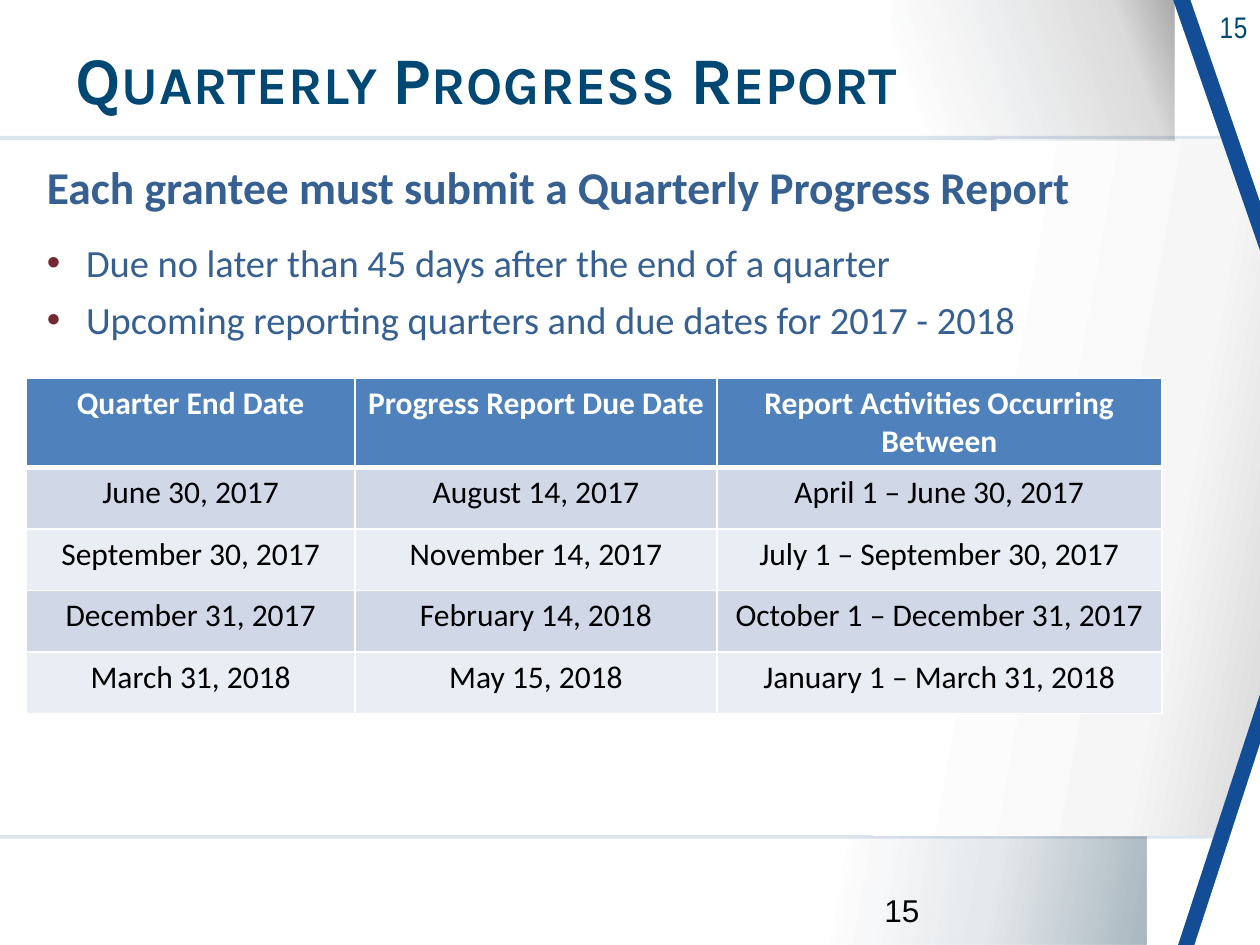
"""Build the quarterly progress report slide."""
from dataclasses import dataclass
from typing import Any, Dict, NamedTuple, Tuple

from lxml.etree import SubElement
from pptx import Presentation
from pptx.dml.color import RGBColor
from pptx.enum.shapes import MSO_SHAPE
from pptx.enum.text import MSO_ANCHOR, MSO_AUTO_SIZE, PP_ALIGN
from pptx.oxml.ns import qn
from pptx.util import Cm, Pt

WHITE = RGBColor(0xFF, 0xFF, 0xFF)
BLACK = RGBColor(0x00, 0x00, 0x00)
PALE = RGBColor(0xF6, 0xF6, 0xF6)
GREY = RGBColor(0xD9, 0xD9, 0xD9)
RULE = RGBColor(0x27, 0x5A, 0x99)
NAVY = RGBColor(0x00, 0x2C, 0x47)
BLUE = RGBColor(0x12, 0x4D, 0x95)
TITLE = RGBColor(0x00, 0x48, 0x74)
TEXT = RGBColor(0x37, 0x60, 0x92)
BULLET = RGBColor(0x75, 0x28, 0x32)
HEADER = RGBColor(0x4F, 0x81, 0xBD)
BANDS = (RGBColor(0xD0, 0xD8, 0xE8), RGBColor(0xE9, 0xED, 0xF4))


class Box(NamedTuple):
    left: float
    top: float
    width: float
    height: float


class Stop(NamedTuple):
    pos: int
    color: RGBColor
    alpha: int = 100


@dataclass
class Panel:
    box: Box
    stops: Tuple[Stop, ...]
    angle: int = 0


@dataclass
class Corner:
    box: Box
    color: RGBColor
    flipped: bool


@dataclass
class Line:
    text: str
    font: Dict[str, Any]
    para: Dict[str, Any]
    bullet: bool = False


PANELS = (
    Panel(Box(0, 2.74, 25.4, 14.17), (Stop(0, RULE, 16),)),
    Panel(Box(0, 2.82, 25.4, 14.02),
          (Stop(0, WHITE), Stop(72, WHITE), Stop(90, PALE), Stop(100, GREY)), 10),
    Panel(Box(16.33, 16.87, 6.78, 2.18),
          (Stop(10, NAVY, 0), Stop(56, NAVY, 11), Stop(100, NAVY, 34)), 10),
    Panel(Box(17.98, 0, 5.69, 2.84),
          (Stop(10, NAVY, 0), Stop(81, BLACK, 14), Stop(100, BLACK, 34)), 340),
)
CORNERS = (
    Corner(Box(23.65, 0, 1.75, 5.05), BLUE, True),
    Corner(Box(24, 0, 1.4, 4.06), WHITE, True),
    Corner(Box(23.75, 14, 1.65, 5.05), BLUE, False),
    Corner(Box(24.08, 15, 1.32, 4.05), WHITE, False),
)
ITEM = {"name": "Calibri", "size": Pt(22), "bold": False, "color": TEXT}
BODY = (
    Line("Each grantee must submit a Quarterly Progress Report",
         {**ITEM, "size": Pt(26), "bold": True},
         {"line_spacing": 1.1, "space_before": Pt(0)}),
    Line("Due no later than 45 days after the end of a quarter", ITEM,
         {"level": 1, "line_spacing": 1.1, "space_before": Pt(12),
          "space_after": Pt(6)}, True),
    Line("Upcoming reporting quarters and due dates for 2017 - 2018", ITEM,
         {"level": 1, "space_before": Pt(0), "space_after": Pt(6)}, True),
)
ROWS = (
    ("Quarter End Date", "Progress Report Due Date", "Report Activities Occurring Between"),
    ("June 30, 2017", "August 14, 2017", "April 1 – June 30, 2017"),
    ("September 30, 2017", "November 14, 2017", "July 1 – September 30, 2017"),
    ("December 31, 2017", "February 14, 2018", "October 1 – December 31, 2017"),
    ("March 31, 2018", "May 15, 2018", "January 1 – March 31, 2018"),
)
COL_WIDTHS = (6.63, 7.29, 8.97)
ROW_HEIGHTS = (1.8,) + (1.24,) * 4


def apply(obj: Any, fmt: Dict[str, Any]) -> None:
    for key, value in fmt.items():
        if key == "color":
            obj.color.rgb = value
        else:
            setattr(obj, key, value)


def place(sp: Any, box: Box) -> None:
    apply(sp, {key: Cm(value) for key, value in box._asdict().items()})


def write(p: Any, text: str, font: Dict[str, Any], para: Dict[str, Any]) -> Any:
    apply(p, para)
    r = p.add_run()
    r.text = text
    apply(r.font, font)
    return r


def add_color(parent: Any, color: RGBColor, alpha: int = 100) -> None:
    clr = SubElement(parent, qn("a:srgbClr"), val=str(color))
    if alpha < 100:
        SubElement(clr, qn("a:alpha"), val=str(alpha * 1000))


def add_plain(s: Any, kind: MSO_SHAPE, box: Box) -> Any:
    sp = s.shapes.add_shape(kind, *map(Cm, box))
    sp.shadow.inherit = False
    sp.line.fill.background()
    return sp


def add_panel(s: Any, panel: Panel) -> None:
    spPr = add_plain(s, MSO_SHAPE.RECTANGLE, panel.box)._element.spPr
    if len(panel.stops) == 1:
        fill = SubElement(spPr, qn("a:solidFill"))
        add_color(fill, panel.stops[0].color, panel.stops[0].alpha)
    else:
        fill = SubElement(spPr, qn("a:gradFill"), rotWithShape="1")
        stops = SubElement(fill, qn("a:gsLst"))
        for stop in panel.stops:
            gs = SubElement(stops, qn("a:gs"), pos=str(stop.pos * 1000))
            add_color(gs, stop.color, stop.alpha)
        SubElement(fill, qn("a:lin"), ang=str(panel.angle * 60000), scaled="0")
    spPr.insert(2, fill)


def add_corner(s: Any, corner: Corner) -> None:
    sp = add_plain(s, MSO_SHAPE.ISOSCELES_TRIANGLE, corner.box)
    sp.adjustments[0] = 1
    sp.fill.solid()
    sp.fill.fore_color.rgb = corner.color
    if corner.flipped:
        sp._element.spPr.xfrm.set("flipV", "1")


def add_number(s: Any, box: Box, font: Dict[str, Any], align: PP_ALIGN) -> Any:
    tf = s.shapes.add_textbox(*map(Cm, box)).text_frame
    tf.word_wrap = True
    return write(tf.paragraphs[0], "15", font, {"alignment": align})


def fill_title(s: Any) -> None:
    sp = s.shapes.title
    place(sp, Box(1.27, 0.61, 20.32, 2.16))
    s.shapes._spTree.append(sp._element)
    apply(sp.text_frame, {"vertical_anchor": MSO_ANCHOR.MIDDLE,
                          "auto_size": MSO_AUTO_SIZE.NONE})
    r = write(sp.text_frame.paragraphs[0], "Quarterly Progress Report",
              {"name": "Karla", "size": Pt(38), "bold": True, "color": TITLE},
              {"alignment": PP_ALIGN.LEFT, "line_spacing": 0.85})
    r.font._element.set("cap", "small")
    r.font._element.set("spc", "40")


def fill_body(s: Any) -> None:
    sp = s.placeholders[1]
    place(sp, Box(0.69, 2.97, 22.02, 4.45))
    s.shapes._spTree.append(sp._element)
    tf = sp.text_frame
    tf.auto_size = MSO_AUTO_SIZE.NONE
    for i, line in enumerate(BODY):
        p = tf.paragraphs[0] if i == 0 else tf.add_paragraph()
        pPr = p._p.get_or_add_pPr()
        indent = Cm(0.79) if line.bullet else 0
        pPr.set("marL", str(indent))
        pPr.set("indent", str(-indent))
        if line.bullet:
            add_color(SubElement(pPr, qn("a:buClr")), BULLET)
            SubElement(pPr, qn("a:buFont"), typeface="Arial")
            SubElement(pPr, qn("a:buChar"), char="•")
        else:
            SubElement(pPr, qn("a:buNone"))
        write(p, line.text, line.font, line.para)


def add_schedule(s: Any) -> None:
    box = Box(0.53, 7.62, sum(COL_WIDTHS), sum(ROW_HEIGHTS))
    table = s.shapes.add_table(len(ROWS), len(COL_WIDTHS), *map(Cm, box)).table
    for col, width in zip(table.columns, COL_WIDTHS):
        col.width = Cm(width)
    for i, (row, height, texts) in enumerate(zip(table.rows, ROW_HEIGHTS, ROWS)):
        row.height = Cm(height)
        head = i == 0
        font = {"name": "Calibri", "size": Pt(18), "bold": head,
                "color": WHITE if head else BLACK}
        for cell, text in zip(row.cells, texts):
            tcPr = cell._tc.get_or_add_tcPr()
            for side in "LRTB":
                thick = (head and side == "B") or (i == 1 and side == "T")
                ln = SubElement(tcPr, qn(f"a:ln{side}"), w=str(Pt(3 if thick else 1)))
                add_color(SubElement(ln, qn("a:solidFill")), WHITE)
            cell.fill.solid()
            cell.fill.fore_color.rgb = HEADER if head else BANDS[(i - 1) % 2]
            write(cell.text_frame.paragraphs[0], text, font,
                  {"alignment": PP_ALIGN.CENTER})


def main() -> None:
    prs = Presentation()
    prs.slide_width, prs.slide_height = Cm(25.4), Cm(19.05)
    s = prs.slides.add_slide(prs.slide_layouts[1])
    for panel in PANELS:
        add_panel(s, panel)
    for corner in CORNERS:
        add_corner(s, corner)
    r = add_number(s, Box(23.37, 0.05, 2.03, 0.99),
                   {"name": "Arial Narrow", "size": Pt(17), "color": TITLE}, PP_ALIGN.RIGHT)
    r.font._element.set("spc", "40")
    fill_title(s)
    fill_body(s)
    add_number(s, Box(17.58, 17.83, 5.92, 1.02),
               {"name": "Arial", "size": Pt(18), "color": BLACK}, PP_ALIGN.LEFT)
    add_schedule(s)
    prs.save("out.pptx")


if __name__ == "__main__":
    main()
